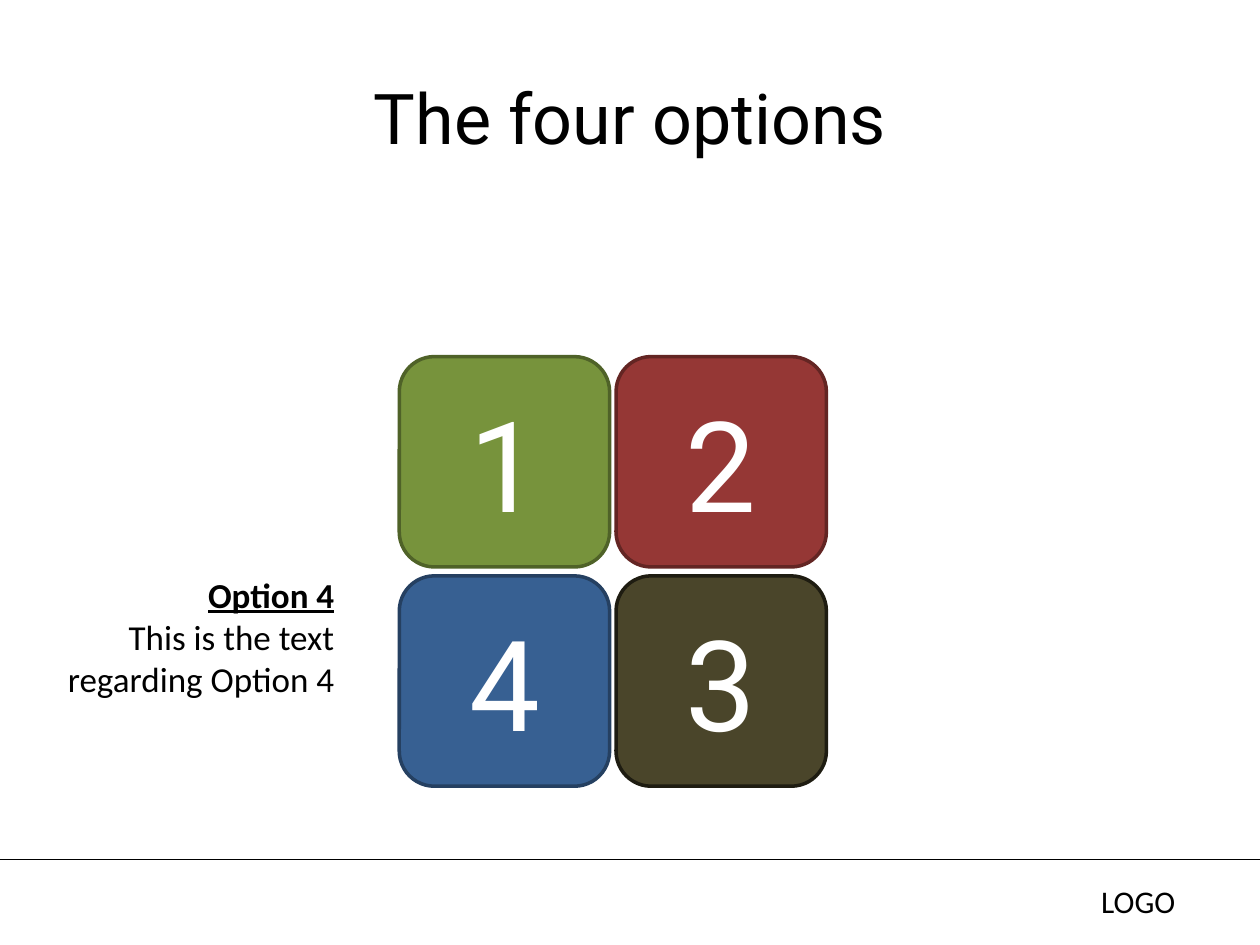
"""Build the slide that presents four numbered options."""
from dataclasses import dataclass

from lxml import etree
from pptx import Presentation
from pptx.dml.color import RGBColor
from pptx.enum import shapes, text
from pptx.oxml import ns
from pptx.util import Cm, Pt


@dataclass(frozen=True)
class Theme:
    """Fonts, colours and type sizes."""
    display: str = "Roboto"
    body: str = "Calibri"
    ink: str = "000000"
    paper: str = "FFFFFF"
    title_size: int = 40
    number_size: int = 72
    note_size: int = 20
    logo_size: int = 18
    tile_line: float = 2
    rule_line: float = 0.75


@dataclass(frozen=True)
class Box:
    """A frame in centimetres."""
    left: float
    top: float
    width: float
    height: float

    def lengths(self) -> tuple:
        """Return the frame as lengths."""
        return Cm(self.left), Cm(self.top), Cm(self.width), Cm(self.height)


@dataclass(frozen=True)
class Option:
    """A numbered tile with its place in the grid."""
    number: int
    column: int
    row: int
    fill: str
    line: str


THEME = Theme()
SLIDE_WIDTH, SLIDE_HEIGHT = 25.4, 19.05
RULE_TOP = 17.32
TITLE = Box(1.27, 0.76, 22.86, 3.18)
NOTE = Box(0, 11.43, 6.99, 2.82)
LOGO = Box(21.95, 17.65, 2.82, 1.02)
FIRST_TILE = Box(8.05, 7.19, 4.24, 4.24)
COLUMN_STEP, ROW_STEP = 4.37, 4.42
OPTIONS = [
    Option(1, 0, 0, "77933C", "4F6228"),
    Option(2, 1, 0, "953735", "632523"),
    Option(3, 1, 1, "4A452A", "1E1C11"),
    Option(4, 0, 1, "376092", "254061"),
]


def write(paragraph, words: str, face: str, size: float, color: str,
          align=text.PP_ALIGN.LEFT) -> None:
    """Fill a paragraph and format it."""
    paragraph.text = words
    paragraph.alignment = align
    paragraph.font.name = face
    paragraph.font.size = Pt(size)
    paragraph.font.color.rgb = RGBColor.from_string(color)


def add_rule(slide) -> None:
    """Draw the line above the footer."""
    rule = slide.shapes.add_connector(
        shapes.MSO_CONNECTOR.STRAIGHT, 0, Cm(RULE_TOP), Cm(SLIDE_WIDTH), Cm(RULE_TOP))
    rule.line.color.rgb = RGBColor.from_string(THEME.ink)
    rule.line.width = Pt(THEME.rule_line)
    etree.SubElement(rule._element.spPr, ns.qn("a:effectLst"))


def add_text(slide, box: Box, lines: list[str], size: float, align=text.PP_ALIGN.LEFT):
    """Add a wrapped text box and return its paragraphs."""
    frame = slide.shapes.add_textbox(*box.lengths()).text_frame
    frame.word_wrap = True
    for _ in lines[1:]:
        frame.add_paragraph()
    for paragraph, words in zip(frame.paragraphs, lines):
        write(paragraph, words, THEME.body, size, THEME.ink, align)
    return frame.paragraphs


def add_tile(slide, option: Option) -> None:
    """Draw one numbered tile in the grid."""
    box = Box(FIRST_TILE.left + option.column * COLUMN_STEP,
              FIRST_TILE.top + option.row * ROW_STEP,
              FIRST_TILE.width, FIRST_TILE.height)
    tile = slide.shapes.add_shape(shapes.MSO_SHAPE.ROUNDED_RECTANGLE, *box.lengths())
    tile.shadow.inherit = False
    tile.fill.solid()
    tile.fill.fore_color.rgb = RGBColor.from_string(option.fill)
    tile.line.color.rgb = RGBColor.from_string(option.line)
    tile.line.width = Pt(THEME.tile_line)
    tile.text_frame.vertical_anchor = text.MSO_ANCHOR.MIDDLE
    write(tile.text_frame.paragraphs[0], str(option.number), THEME.display,
          THEME.number_size, THEME.paper, text.PP_ALIGN.CENTER)


def set_title(slide, words: str) -> None:
    """Place and format the slide title."""
    title = slide.shapes.title
    title.left, title.top, title.width, title.height = TITLE.lengths()
    title.text_frame.vertical_anchor = text.MSO_ANCHOR.MIDDLE
    write(title.text_frame.paragraphs[0], words, THEME.display,
          THEME.title_size, THEME.ink, text.PP_ALIGN.CENTER)


def main() -> None:
    """Compose the slide and save it."""
    deck = Presentation()
    deck.slide_width, deck.slide_height = Cm(SLIDE_WIDTH), Cm(SLIDE_HEIGHT)
    slide = deck.slides.add_slide(deck.slide_layouts[5])
    add_rule(slide)
    add_text(slide, LOGO, ["LOGO"], THEME.logo_size)
    set_title(slide, "The four options")
    for option in OPTIONS:
        add_tile(slide, option)
    heading, *_ = add_text(slide, NOTE, ["Option 4", "This is the text regarding Option 4"],
                           THEME.note_size, text.PP_ALIGN.RIGHT)
    heading.font.bold = True
    heading.font.underline = True
    deck.save("out.pptx")


if __name__ == "__main__":
    main()
